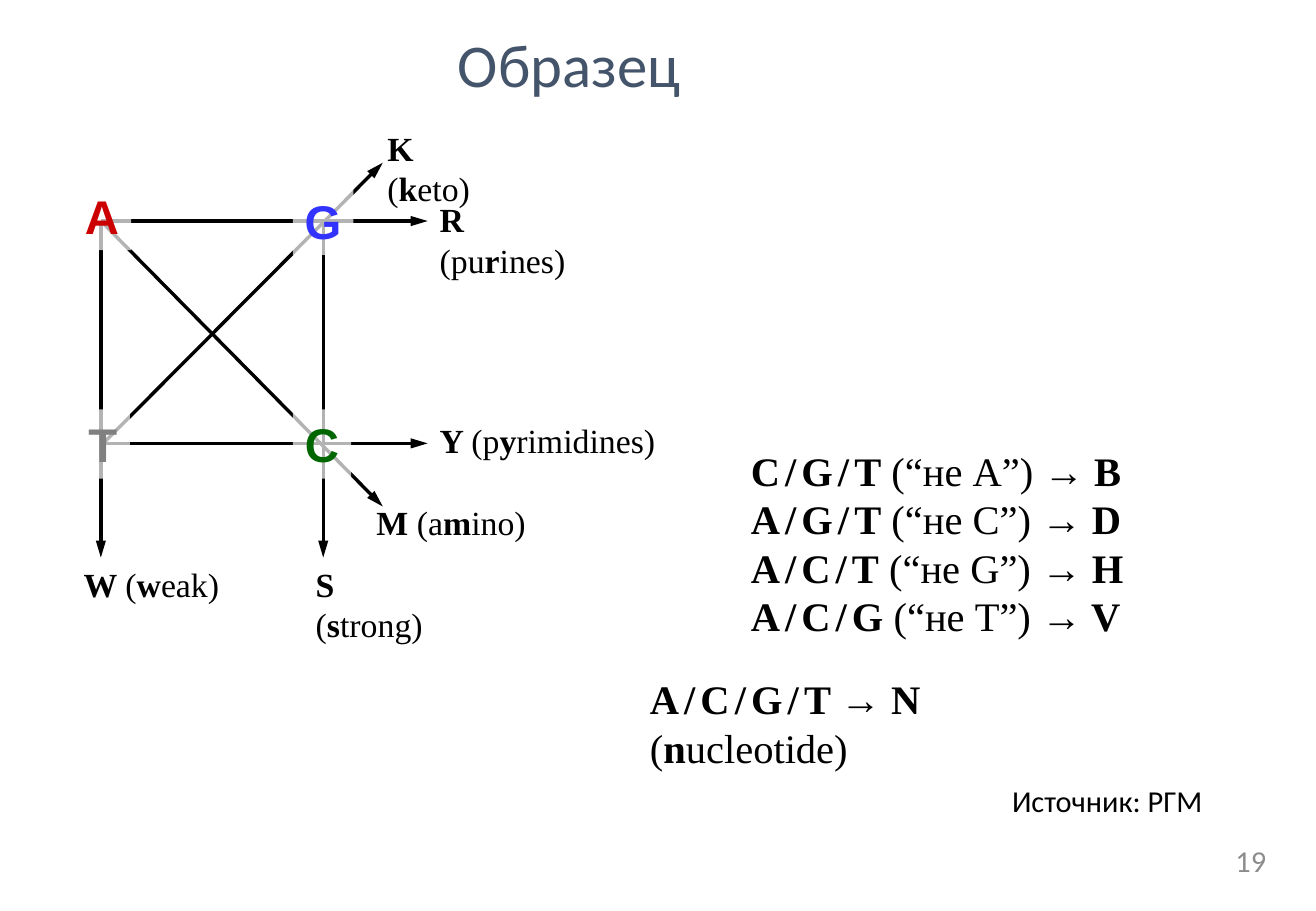
import pptx
import pptx.dml.color
import pptx.enum.shapes
import pptx.enum.text
import pptx.oxml.ns
import pptx.oxml.xmlchemy
import pptx.util
from pptx.util import Inches

COLORS = {
    "title": "44546A", "ink": "000000", "number": "8C8C8C", "veil": "FFFFFF",
    "A": "CC0000", "G": "3333FF", "T": "808080", "C": "006600",
}
SERIF = "Times New Roman"
ALIGN = pptx.enum.text.PP_ALIGN
ANCHOR = pptx.enum.text.MSO_ANCHOR
AUTO_SIZE = pptx.enum.text.MSO_AUTO_SIZE


def color(name):
    return pptx.dml.color.RGBColor.from_string(COLORS[name])


def apply_format(target, values):
    for name, value in values.items():
        setattr(target, name, value)


def add_element(parent, tag, values):
    element = pptx.oxml.xmlchemy.OxmlElement(tag)
    for name, value in values.items():
        element.set(name, value)
    parent.append(element)


def add_run(paragraph, text, font, size, color_name, bold=False):
    run = paragraph.add_run()
    run.text = text
    apply_format(run.font, {"name": font, "size": pptx.util.Pt(size), "bold": bold})
    run.font.color.rgb = color(color_name)


def add_marked_runs(paragraph, marked_text, size):
    for index, part in enumerate(marked_text.split("*")):
        if part:
            add_run(paragraph, part, SERIF, size, "ink", index % 2 == 1)


def add_base_set(paragraph, bases):
    for index, base in enumerate(bases):
        if index:
            for text, size in ((" ", 12), ("/", 24), (" ", 12)):
                add_run(paragraph, text, SERIF, size, "ink", True)
        add_run(paragraph, base, SERIF, 24, "ink", True)


def text_frame(slide, box, wrap=False, anchor=ANCHOR.TOP, fit=AUTO_SIZE.SHAPE_TO_FIT_TEXT):
    frame = slide.shapes.add_textbox(*map(Inches, box)).text_frame
    apply_format(frame, {"word_wrap": wrap, "auto_size": fit, "vertical_anchor": anchor})
    return frame


def add_plain_text(slide, box, text, size, color_name, align=ALIGN.LEFT, **options):
    paragraph = text_frame(slide, box, **options).paragraphs[0]
    paragraph.alignment = align
    add_run(paragraph, text, "Calibri", size, color_name)


def add_arrow(slide, start, end):
    points = map(Inches, (*start, *end))
    arrow = slide.shapes.add_connector(pptx.enum.shapes.MSO_CONNECTOR.STRAIGHT, *points)
    arrow.line.color.rgb = color("ink")
    arrow.line.width = pptx.util.Pt(2)
    add_element(arrow.get_or_add_ln(), "a:tailEnd", {"type": "triangle", "w": "med", "len": "lg"})
    add_element(arrow._element.spPr, "a:effectLst", {})


def add_base(slide, box, base):
    shape = slide.shapes.add_shape(pptx.enum.shapes.MSO_SHAPE.RECTANGLE, *map(Inches, box))
    shape.shadow.inherit = False
    shape.fill.solid()
    shape.fill.fore_color.rgb = color("veil")
    fill_color = shape._element.spPr.find(".//" + pptx.oxml.ns.qn("a:srgbClr"))
    add_element(fill_color, "a:alpha", {"val": "70000"})
    shape.line.fill.background()
    frame = shape.text_frame
    apply_format(frame, {"word_wrap": False, "auto_size": AUTO_SIZE.SHAPE_TO_FIT_TEXT,
                         "vertical_anchor": ANCHOR.TOP})
    frame.paragraphs[0].alignment = ALIGN.LEFT
    add_run(frame.paragraphs[0], base, "Arial", 28, base, True)


def add_base_square(slide, box):
    left, top, width, height = box
    right, bottom = left + width, top + height
    arrows = [
        ((right, top), (right, top + 2.77)),
        ((left, bottom), (left + 2.69, bottom)),
        ((left, top), (left + 2.69, top)),
        ((left, top), (left, top + 2.77)),
        ((left, top), (left + 2.32, top + 2.35)),
        ((left, bottom + 0.02), (left + 2.32, top - 0.48)),
    ]
    for start, end in arrows:
        add_arrow(slide, start, end)

    bases = [
        ("A", -0.23, -0.33, 0.48), ("G", 1.58, -0.29, 0.5),
        ("T", -0.2, 1.55, 0.44), ("C", 1.58, 1.55, 0.48),
    ]
    for base, across, down, base_width in bases:
        add_base(slide, (left + across, top + down, base_width, 0.57), base)

    labels = [
        ("*R *(pu*r*ines)", 2.69, -0.23, 1.5),
        ("*Y *(p*y*rimidines)", 2.69, 1.59, 1.98),
        ("*W *(*w*eak)", -0.24, 2.77, 1.32),
        ("*S *(*s*trong)", 1.67, 2.77, 1.3),
        ("*M *(a*m*ino)", 2.17, 2.26, 1.43),
        ("*K *(*k*eto)", 2.26, -0.82, 1.16),
    ]
    for text, across, down, label_width in labels:
        frame = text_frame(slide, (left + across, top + down, label_width, 0.43))
        add_marked_runs(frame.paragraphs[0], text, 20)


def add_exclusions(slide, box):
    frame = text_frame(slide, box, wrap=True)
    for index, (missing, code) in enumerate(zip("ACGT", "BDHV")):
        paragraph = frame.add_paragraph() if index else frame.paragraphs[0]
        add_base_set(paragraph, "ACGT".replace(missing, ""))
        add_marked_runs(paragraph, f" (“не {missing}”) *→ {code}*", 24)


def add_any_base(slide, box):
    paragraph = text_frame(slide, box, wrap=True).paragraphs[0]
    add_base_set(paragraph, "ACGT")
    add_marked_runs(paragraph, "* → N*", 24)
    paragraph.add_line_break()
    add_marked_runs(paragraph, "(*n*ucleotide)", 24)


def main():
    presentation = pptx.Presentation()
    presentation.slide_width = Inches(10.83)
    presentation.slide_height = Inches(7.5)
    slide = presentation.slides.add_slide(presentation.slide_layouts[6])
    add_plain_text(slide, (3.67, 0.17, 2.08, 0.7), "Образец", 36, "title")
    add_base_square(slide, (0.83, 1.82, 1.83, 1.83))
    add_exclusions(slide, (6.08, 3.62, 3.39, 1.72))
    add_any_base(slide, (5.25, 5.5, 4.14, 0.9))
    add_plain_text(slide, (8.23, 6.39, 2.18, 0.4), "Источник: РГМ", 18, "ink", wrap=True)
    add_plain_text(slide, (7.66, 6.88, 2.86, 0.4), "19", 18, "number", ALIGN.RIGHT,
                   wrap=True, anchor=ANCHOR.MIDDLE, fit=AUTO_SIZE.NONE)
    presentation.save("out.pptx")


if __name__ == "__main__":
    main()
